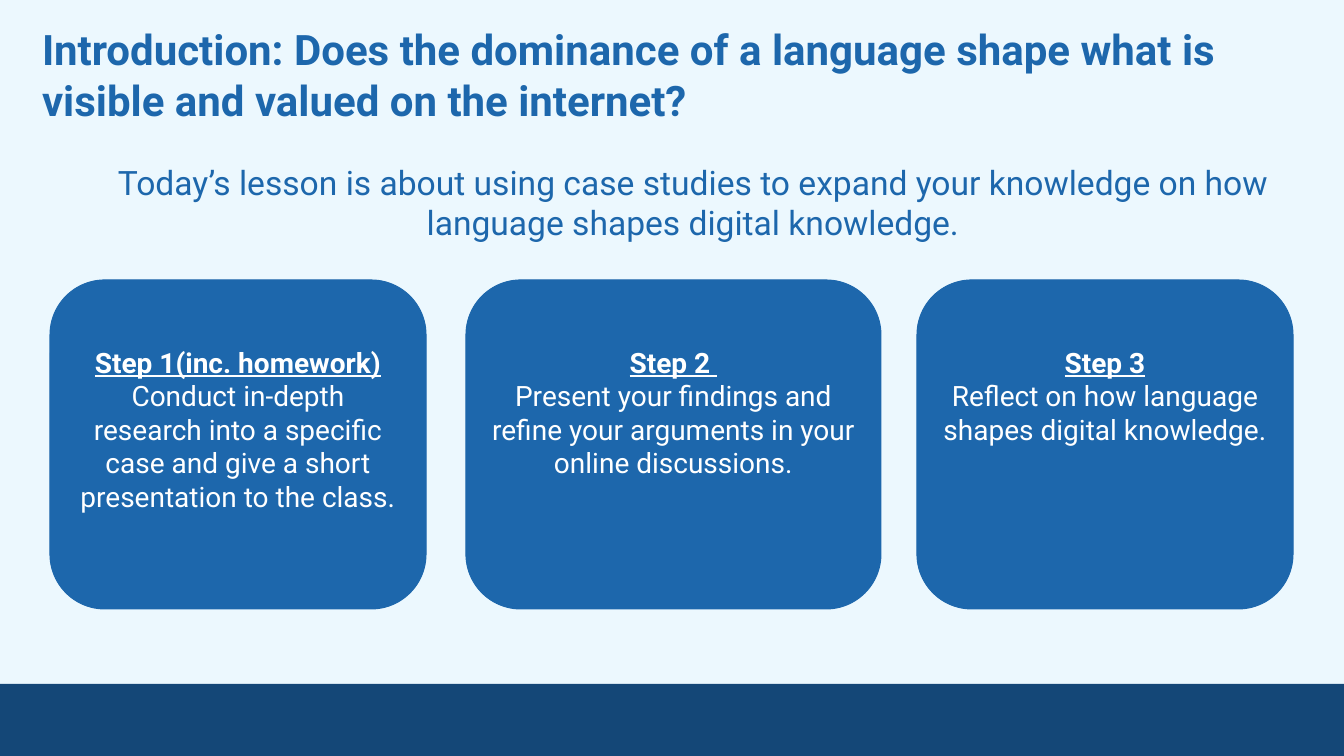
from pptx import Presentation
from pptx.dml.color import RGBColor
from pptx.enum.shapes import MSO_SHAPE
from pptx.enum.text import MSO_ANCHOR, MSO_AUTO_SIZE, PP_ALIGN
from pptx.util import Pt

RECTANGLE = MSO_SHAPE.RECTANGLE
ROUNDED = MSO_SHAPE.ROUNDED_RECTANGLE
TOP = MSO_ANCHOR.TOP
NO_FIT = MSO_AUTO_SIZE.NONE
LEFT, CENTER = PP_ALIGN.LEFT, PP_ALIGN.CENTER

EMU_PER_PX = 914400 / 100.8
TITLE_ONLY = 5

STEPS = [
    (50, 376, "Step 1(inc. homework)",
     "Conduct in-depth research into a specific case and give a short presentation to the class."),
    (466, 415, "Step 2 ",
     "Present your findings and refine your arguments in your online discussions."),
    (917, 376, "Step 3",
     "Reflect on how language shapes digital knowledge."),
]


def px(length):
    return round(length * EMU_PER_PX)


def colour(value):
    return RGBColor.from_string(value)


class LessonSlide:
    font = "Roboto"
    blue = "1D67AC"
    navy = "144777"
    pale = "ECF8FE"
    white = "FFFFFF"

    def __init__(self, deck):
        self.page = deck.slides.add_slide(deck.slide_layouts[TITLE_ONLY])
        background = self.page.background.fill
        background.solid()
        background.fore_color.rgb = colour(self.pale)

    def add_text(self, para, text, size, ink, align=CENTER, bold=False, underline=False):
        para.alignment = align
        para.line_spacing = 1.0
        span = para.add_run()
        span.text = text
        font = span.font
        font.name, font.size = self.font, Pt(size)
        font.bold, font.underline = bold, underline
        font.color.rgb = colour(ink)

    def frame(self, box, inset, top_inset):
        frame = box.text_frame
        frame.word_wrap = True
        frame.auto_size = NO_FIT
        frame.vertical_anchor = TOP
        frame.margin_left = frame.margin_right = frame.margin_bottom = px(inset)
        frame.margin_top = px(top_inset)
        return frame

    def shape(self, kind, left, top, width, height, fill):
        shape = self.page.shapes.add_shape(kind, px(left), px(top), px(width), px(height))
        shape.shadow.inherit = False
        shape.fill.solid()
        shape.fill.fore_color.rgb = colour(fill)
        shape.line.color.rgb = colour(fill)
        shape.line.width = Pt(0.75)
        return shape

    def footer(self):
        band = self.shape(RECTANGLE, 0, 684, 1344, 72, self.navy)
        band.line.fill.background()

    def title(self, text):
        title = self.page.shapes.title
        title.left, title.top, title.width, title.height = px(29), px(11), px(1288), px(129)
        frame = self.frame(title, 13, 13)
        self.add_text(frame.paragraphs[0], text, 30, self.blue, align=LEFT, bold=True)

    def introduction(self, text):
        box = self.page.shapes.add_textbox(px(92), px(152), px(1202), px(142))
        frame = self.frame(box, 10, 10)
        self.add_text(frame.paragraphs[0], text, 24, self.blue)

    def step(self, left, width, heading, task):
        card = self.shape(ROUNDED, left, 280, width, 329, self.blue)
        frame = self.frame(card, 10, 49)
        self.add_text(frame.paragraphs[0], heading, 20, self.white, bold=True, underline=True)
        self.add_text(frame.add_paragraph(), task, 20, self.white)


def main():
    deck = Presentation()
    deck.slide_width, deck.slide_height = px(1344), px(756)
    slide = LessonSlide(deck)
    slide.footer()
    slide.title("Introduction: Does the dominance of a language shape what is "
                "visible and valued on the internet?")
    slide.introduction("Today’s lesson is about using case studies to expand your "
                       "knowledge on how language shapes digital knowledge.")
    for left, width, heading, task in STEPS:
        slide.step(left, width, heading, task)
    deck.save("out.pptx")


if __name__ == "__main__":
    main()
